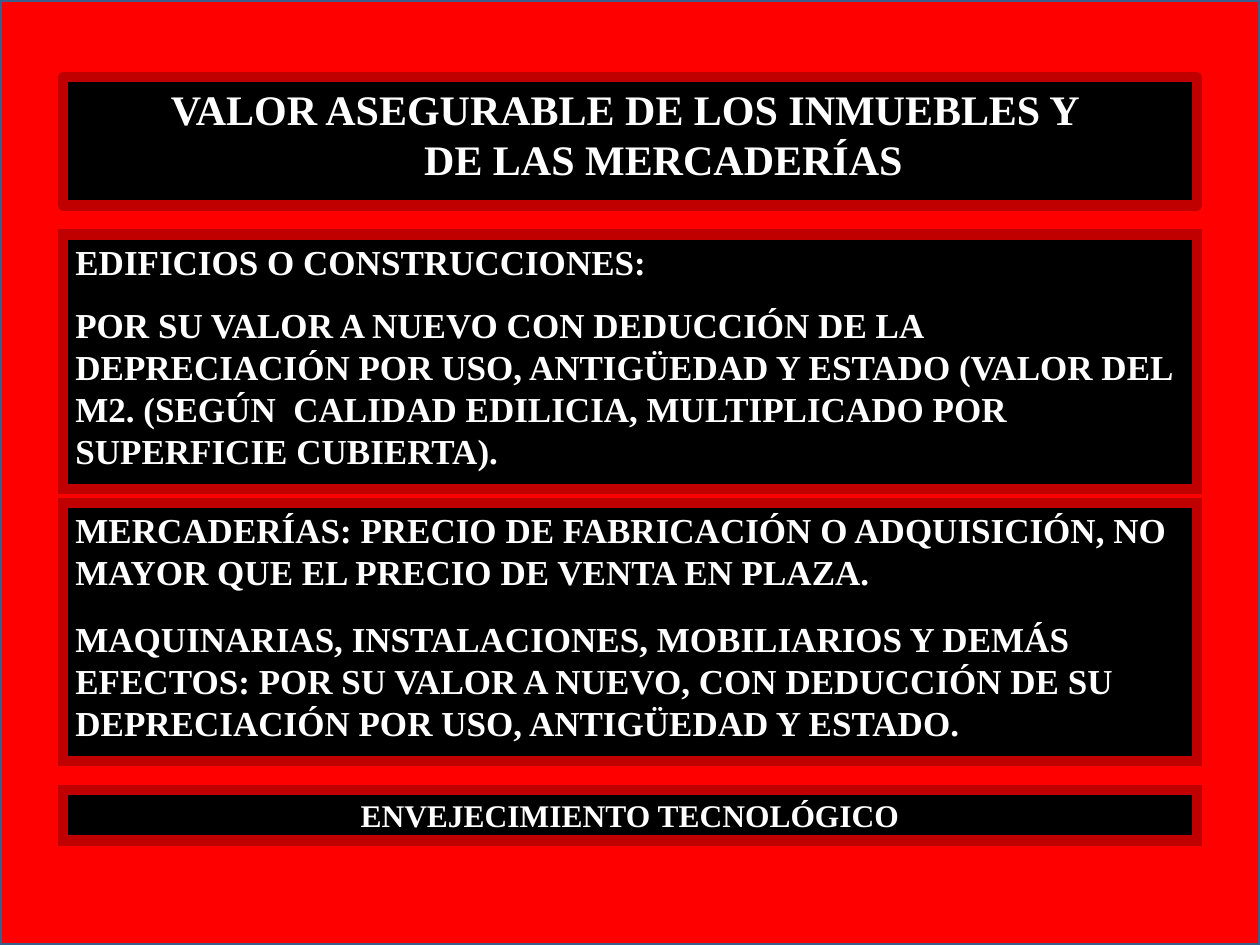
"""Build the slide on the insurable value of buildings and goods."""
from dataclasses import dataclass

from lxml import etree
from pptx import Presentation
from pptx.dml.color import RGBColor
from pptx.enum import shapes, text
from pptx.oxml import ns
from pptx.util import Inches, Pt

RED = RGBColor(0xFF, 0x00, 0x00)
DARK = RGBColor(0xC0, 0x00, 0x00)
BLUE = RGBColor(0x3A, 0x5F, 0x8C)
BLACK = RGBColor(0x00, 0x00, 0x00)
WHITE = RGBColor(0xFF, 0xFF, 0xFF)
FONT = "Times New Roman"
LEFT, WIDTH = 0.5, 9
LEAD = text.PP_ALIGN.LEFT
MID = text.PP_ALIGN.CENTER


@dataclass
class Panel:
    top: float
    high: float
    lines: list[str]
    size: int = 20
    gap: int = 0
    align: text.PP_ALIGN = LEAD


PANELS = [
    Panel(1.86, 2.02, [
        "EDIFICIOS O CONSTRUCCIONES:",
        "POR SU VALOR A NUEVO CON DEDUCCIÓN DE LA DEPRECIACIÓN POR USO, "
        "ANTIGÜEDAD Y ESTADO (VALOR DEL M2. (SEGÚN  CALIDAD EDILICIA, "
        "MULTIPLICADO POR SUPERFICIE CUBIERTA).",
    ], gap=12),
    Panel(3.99, 2.05, [
        "MERCADERÍAS: PRECIO DE FABRICACIÓN O ADQUISICIÓN, NO MAYOR QUE "
        "EL PRECIO DE VENTA EN PLAZA.",
        "MAQUINARIAS, INSTALACIONES, MOBILIARIOS Y DEMÁS EFECTOS: POR SU "
        "VALOR A NUEVO, CON DEDUCCIÓN DE SU DEPRECIACIÓN POR USO, "
        "ANTIGÜEDAD Y ESTADO.",
    ], gap=14),
    Panel(6.27, 0.4, ["ENVEJECIMIENTO TECNOLÓGICO"], size=18, align=MID),
]


def paint(shape, fill: RGBColor, edge: RGBColor, width: float) -> None:
    shape.fill.solid()
    shape.fill.fore_color.rgb = fill
    shape.line.color.rgb = edge
    shape.line.width = Pt(width)


def write(shape, lines: list[str], *, size: int, gap: int = 0,
          align: text.PP_ALIGN = LEAD) -> None:
    frame = shape.text_frame
    frame.word_wrap = True
    frame.auto_size = text.MSO_AUTO_SIZE.NONE
    frame.vertical_anchor = text.MSO_ANCHOR.TOP
    for i, line in enumerate(lines):
        para = frame.add_paragraph() if i else frame.paragraphs[0]
        para.text = line
        para.alignment = align
        para.space_before = Pt(gap if i else 0)
        for run in para.runs:
            font = run.font
            font.name, font.size, font.bold = FONT, Pt(size), True
            font.color.rgb = WHITE


def block(slide, left: float, top: float, wide: float, high: float):
    shape = slide.shapes.add_shape(
        shapes.MSO_SHAPE.RECTANGLE,
        Inches(left), Inches(top), Inches(wide), Inches(high))
    shape.shadow.inherit = False
    return shape


def draw(slide, panel: Panel) -> None:
    shape = block(slide, LEFT, panel.top, WIDTH, panel.high)
    paint(shape, BLACK, DARK, 6)
    edge = shape.element.spPr.find(ns.qn("a:ln"))
    etree.SubElement(edge, ns.qn("a:miter")).set("lim", "800000")
    write(shape, panel.lines, size=panel.size, gap=panel.gap,
          align=panel.align)


def head(slide) -> None:
    title = slide.shapes.title
    title.left, title.top = Inches(LEFT), Inches(0.61)
    title.width, title.height = Inches(WIDTH), Inches(1.02)
    paint(title, BLACK, DARK, 6)
    write(title, ["VALOR ASEGURABLE DE LOS INMUEBLES Y \vDE LAS MERCADERÍAS"],
          size=24, align=MID)
    props = title.text_frame.paragraphs[0]._p.get_or_add_pPr()
    props.set("marL", str(Inches(0.53)))
    props.set("indent", str(-Inches(0.53)))


def main() -> None:
    deck = Presentation()
    deck.slide_width, deck.slide_height = Inches(10), Inches(7.5)
    slide = deck.slides.add_slide(deck.slide_layouts[5])
    back = block(slide, 0, 0, 10, 7.5)
    paint(back, RED, BLUE, 2)
    slide.shapes.title.element.addprevious(back.element)
    head(slide)
    for panel in PANELS:
        draw(slide, panel)
    deck.save("out.pptx")


if __name__ == "__main__":
    main()
